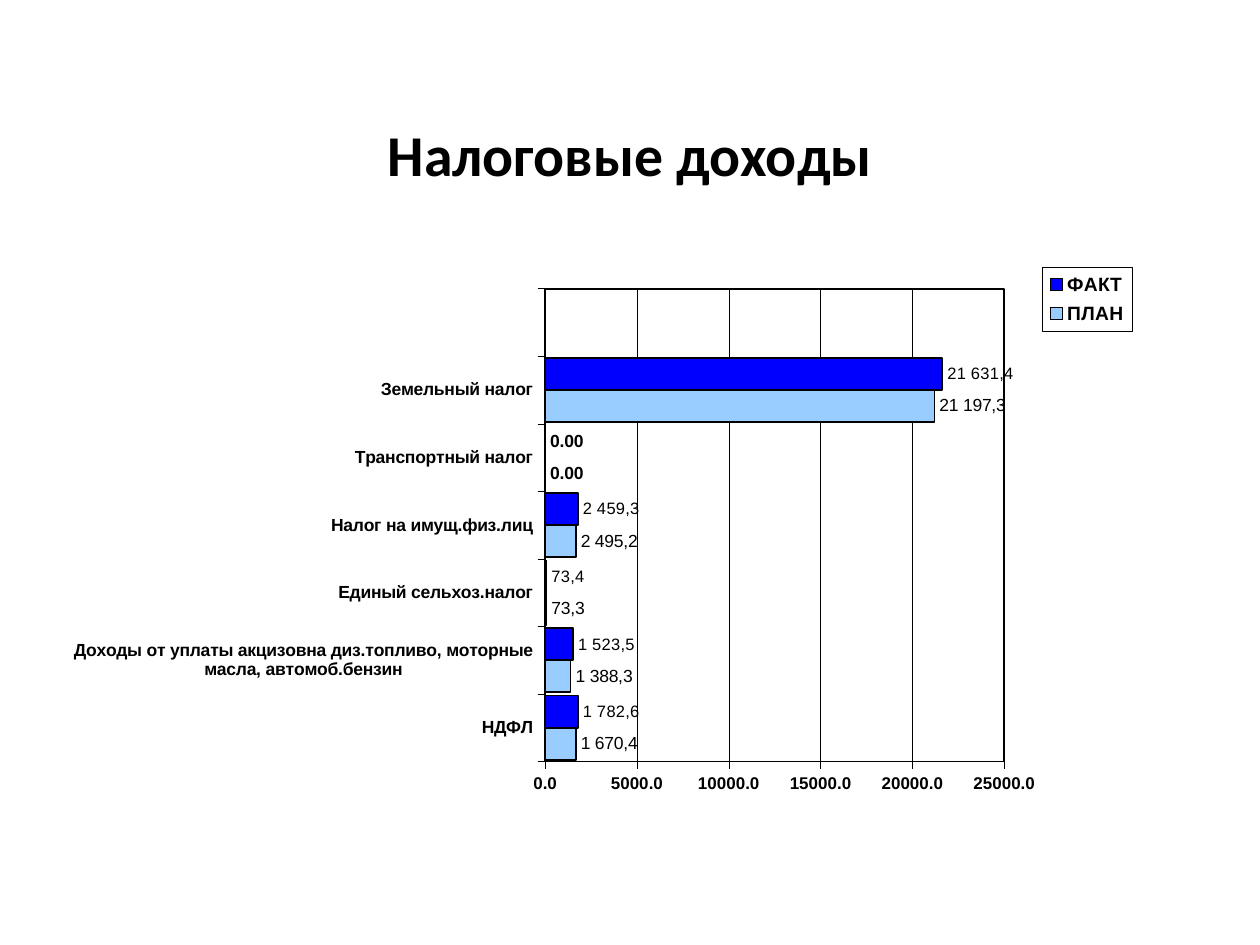
from lxml import etree
from pptx import Presentation
from pptx.chart.data import CategoryChartData
from pptx.dml.color import RGBColor
from pptx.enum.chart import XL_CHART_TYPE, XL_LABEL_POSITION, XL_LEGEND_POSITION, XL_TICK_MARK
from pptx.enum.text import MSO_ANCHOR, PP_ALIGN
from pptx.oxml import parse_xml
from pptx.oxml.ns import nsdecls, qn
from pptx.util import Cm, Pt

BAR = XL_CHART_TYPE.BAR_CLUSTERED
OUT_END = XL_LABEL_POSITION.OUTSIDE_END
RIGHT = XL_LEGEND_POSITION.RIGHT
OUTSIDE, NO_TICK = XL_TICK_MARK.OUTSIDE, XL_TICK_MARK.NONE
MIDDLE, CENTER = MSO_ANCHOR.MIDDLE, PP_ALIGN.CENTER

CATEGORIES = [
    "НДФЛ",
    "Доходы от уплаты акцизовна диз.топливо, моторные масла, автомоб.бензин",
    "Единый сельхоз.налог",
    "Налог на имущ.физ.лиц",
    "Транспортный налог",
    "Земельный налог",
    "",
]
# The label texts are set by hand and may differ from the bar values.
SERIES = [
    {"name": "ПЛАН", "color": "99CCFF", "size": 10,
     "values": [1670.4, 1388.3, 73.3, 1670.4, 0, 21197.3, None],
     "labels": {0: "1 670,4", 1: "1 388,3", 2: "73,3", 3: "2 495,2", 5: "21 197,3"}},
    {"name": "ФАКТ", "color": "0000FF", "size": 9.4,
     "values": [1782.6, 1523.5, 73.4, 1782.6, 0, 21631.4, None],
     "labels": {0: "1 782,6", 1: "1 523,5", 2: "73,4", 3: "2 459,3", 5: "21 631,4"}},
]


def rgb(color):
    return RGBColor.from_string(color)


def set_font(font, **values):
    """Apply format values; color is a hex string and size is in points."""
    font.color.rgb = rgb(values.pop("color", "000000"))
    font.size = Pt(values.pop("size"))
    for name, value in values.items():
        setattr(font, name, value)


def set_line(line, width):
    line.color.rgb = rgb("000000")
    line.width = Pt(width)


def make_layout(x, y, w, h, inner=False):
    """Return a manual layout in fractions of the chart area."""
    layout = parse_xml(f"<c:layout {nsdecls('c')}><c:manualLayout/></c:layout>")
    values = {"layoutTarget": "inner"} if inner else {}
    values.update(xMode="edge", yMode="edge", x=x, y=y, w=w, h=h)
    for name, value in values.items():
        etree.SubElement(layout[0], qn(f"c:{name}")).set("val", str(value))
    return layout


class Deck:
    """Holds the style and the current slide."""

    title_font = {"name": "Calibri", "size": 33, "bold": True}
    chart_font = {"name": "Arial", "bold": True}

    def __init__(self):
        self.prs = Presentation()
        self.prs.slide_width, self.prs.slide_height = Cm(25.4), Cm(19.05)
        self.s = self.prs.slides.add_slide(self.prs.slide_layouts[5])

    def title(self, text, x, y, w, h):
        sp = self.s.shapes.title
        sp.left, sp.top, sp.width, sp.height = Cm(x), Cm(y), Cm(w), Cm(h)
        tf = sp.text_frame
        tf.vertical_anchor = MIDDLE
        p = tf.paragraphs[0]
        p.alignment, p.line_spacing = CENTER, 0.9
        r = p.add_run()
        r.text = text
        set_font(r.font, **self.title_font)

    def bar_chart(self, x, y, w, h):
        data = CategoryChartData()
        data.categories = CATEGORIES
        for item in SERIES:
            data.add_series(item["name"], item["values"])
        frame = self.s.shapes.add_chart(BAR, Cm(x), Cm(y), Cm(w), Cm(h), data)
        chart = frame.chart
        chart.has_title = False
        set_font(chart.font, size=10, **self.chart_font)
        plot = chart.plots[0]
        plot.gap_width, plot.overlap, plot.vary_by_categories = 10, 0, False
        for series, item in zip(plot.series, SERIES):
            self.series(series, item)
        self.axes(chart)
        self.plot_area(chart)
        self.legend(chart)

    def series(self, series, item):
        series.format.fill.solid()
        series.format.fill.fore_color.rgb = rgb(item["color"])
        set_line(series.format.line, 1)
        labels = series.data_labels
        labels.show_value = True
        labels.number_format, labels.number_format_is_linked = "#,##0.00", False
        labels.position = OUT_END
        set_font(labels.font, size=10, **self.chart_font)
        for index, text in item["labels"].items():
            label = series.points[index].data_label
            r = label.text_frame.paragraphs[0].add_run()
            r.text = text
            set_font(r.font, name="Arial", size=item["size"], bold=False)
            label.position = OUT_END

    def axes(self, chart):
        value = chart.value_axis
        for axis, size in ((chart.category_axis, 10), (value, 9.7)):
            axis.major_tick_mark, axis.minor_tick_mark = OUTSIDE, NO_TICK
            set_line(axis.format.line, 0.25)
            set_font(axis.tick_labels.font, size=size, **self.chart_font)
        value.minimum_scale, value.maximum_scale, value.major_unit = 0, 25000, 5000
        value.tick_labels.number_format = "0.0"
        value.tick_labels.number_format_is_linked = False
        value.has_major_gridlines = True
        set_line(value.major_gridlines.format.line, 0.25)

    def plot_area(self, chart):
        area = chart.element.find(".//" + qn("c:plotArea"))
        for old in area.findall(qn("c:layout")):
            area.remove(old)
        area.insert(0, make_layout(0.433, 0.107, 0.404, 0.804, inner=True))
        area.append(parse_xml(
            f"<c:spPr {nsdecls('c', 'a')}><a:noFill/><a:ln w='{Pt(1)}'><a:solidFill>"
            "<a:srgbClr val='000000'/></a:solidFill></a:ln></c:spPr>"))

    def legend(self, chart):
        chart.has_legend = True
        legend = chart.legend
        legend.position, legend.include_in_layout = RIGHT, False
        set_font(legend.font, size=11, **self.chart_font)
        element = legend._element
        for old in element.findall(qn("c:layout")):
            element.remove(old)
        element.find(qn("c:legendPos")).addnext(make_layout(0.87, 0.07, 0.08, 0.11))
        element.find(qn("c:txPr")).addprevious(parse_xml(
            f"<c:spPr {nsdecls('c', 'a')}><a:ln w='{Pt(0.25)}'><a:solidFill>"
            "<a:srgbClr val='000000'/></a:solidFill></a:ln></c:spPr>"))


def main():
    deck = Deck()
    deck.title("Налоговые доходы", 1.27, 1.27, 22.86, 3.81)
    deck.bar_chart(1.07, 4.55, 22.91, 11.86)
    deck.prs.save("out.pptx")


if __name__ == "__main__":
    main()
